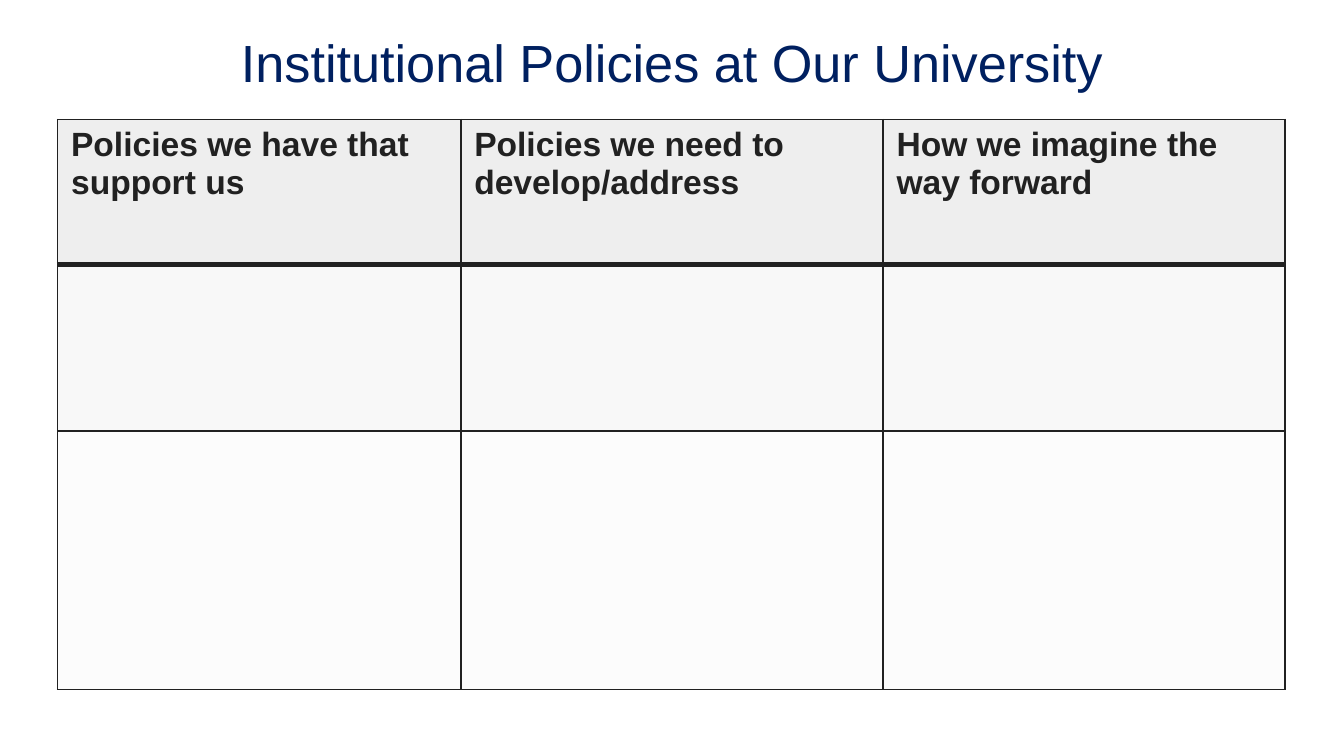
"""Build the slide on institutional policies with a three-column planning table."""
from dataclasses import dataclass

import lxml.etree
import pptx
import pptx.dml.color
import pptx.enum.shapes
import pptx.enum.text
import pptx.oxml.ns
import pptx.util

Cm = pptx.util.Cm
Pt = pptx.util.Pt
RGBColor = pptx.dml.color.RGBColor

NAVY = RGBColor(0x00, 0x20, 0x60)
INK = RGBColor(0x21, 0x21, 0x21)
WHITE = RGBColor(0xFF, 0xFF, 0xFF)
HEADER_GRAY = RGBColor(0xEE, 0xEE, 0xEE)
MIDDLE_GRAY = RGBColor(0xF8, 0xF8, 0xF8)
LOWER_GRAY = RGBColor(0xFC, 0xFC, 0xFC)

THIN = 1
THICK = 3


@dataclass(frozen=True)
class Column:
    heading: str
    width: float


@dataclass(frozen=True)
class Row:
    height: float
    fill: RGBColor
    top_border: int = THIN
    bottom_border: int = THIN


COLUMNS = [
    Column("Policies we have that support us", 7.62),
    Column("Policies we need to develop/address", 7.98),
    Column("How we imagine the way forward", 7.59),
]
ROWS = [
    Row(2.74, HEADER_GRAY, bottom_border=THICK),
    Row(3.15, MIDDLE_GRAY, top_border=THICK),
    Row(4.88, LOWER_GRAY),
]


def write_text(text_frame, text: str, *, size: float, color: RGBColor,
               bold: bool = False, alignment=pptx.enum.text.PP_ALIGN.LEFT) -> None:
    paragraph = text_frame.paragraphs[0]
    paragraph.alignment = alignment
    run = paragraph.add_run()
    run.text = text
    run.font.name = "Arial"
    run.font.size = Pt(size)
    run.font.bold = bold
    run.font.color.rgb = color


def add_border(cell, side: str, width: int) -> None:
    qualify = pptx.oxml.ns.qn
    properties = cell._tc.get_or_add_tcPr()
    line = lxml.etree.SubElement(properties, qualify(f"a:{side}"), w=str(Pt(width)))
    fill = lxml.etree.SubElement(line, qualify("a:solidFill"))
    lxml.etree.SubElement(fill, qualify("a:srgbClr"), val=str(INK))


def add_title(slide, text: str) -> None:
    title = slide.shapes.title
    title.left, title.top, title.width, title.height = Cm(0.86), Cm(0.23), Cm(23.67), Cm(1.6)
    text_frame = title.text_frame
    text_frame.word_wrap = True
    text_frame.auto_size = pptx.enum.text.MSO_AUTO_SIZE.NONE
    text_frame.vertical_anchor = pptx.enum.text.MSO_ANCHOR.TOP
    text_frame.margin_left = text_frame.margin_right = Cm(0.25)
    text_frame.margin_top = Cm(0.35)
    text_frame.margin_bottom = Cm(0)
    write_text(text_frame, text, size=28, color=NAVY,
               alignment=pptx.enum.text.PP_ALIGN.CENTER)


def add_backdrop(slide, width: int, height: int) -> None:
    slide.background.fill.solid()
    slide.background.fill.fore_color.rgb = INK
    backdrop = slide.shapes.add_shape(
        pptx.enum.shapes.MSO_SHAPE.RECTANGLE, 0, 0, width, height)
    backdrop.shadow.inherit = False
    backdrop.fill.solid()
    backdrop.fill.fore_color.rgb = WHITE
    backdrop.line.color.rgb = WHITE
    backdrop.line.width = Pt(2)
    slide.shapes.title.element.addprevious(backdrop.element)


def add_policy_table(slide, columns: list[Column], rows: list[Row]) -> None:
    width = Cm(sum(column.width for column in columns))
    height = Cm(sum(row.height for row in rows))
    table = slide.shapes.add_table(
        len(rows), len(columns), Cm(1.09), Cm(2.26), width, height).table
    table.first_row = False
    table.horz_banding = False
    for column_index, column in enumerate(columns):
        table.columns[column_index].width = Cm(column.width)
    for row_index, row in enumerate(rows):
        table.rows[row_index].height = Cm(row.height)
        for cell in table.rows[row_index].cells:
            borders = {"lnL": THIN, "lnR": THIN,
                       "lnT": row.top_border, "lnB": row.bottom_border}
            for side, border_width in borders.items():
                add_border(cell, side, border_width)
            cell.fill.solid()
            cell.fill.fore_color.rgb = row.fill
    for cell, column in zip(table.rows[0].cells, columns):
        write_text(cell.text_frame, column.heading, size=18, color=INK, bold=True)


def main() -> None:
    presentation = pptx.Presentation()
    presentation.slide_width = Cm(25.4)
    presentation.slide_height = Cm(14.29)
    slide = presentation.slides.add_slide(presentation.slide_layouts.get_by_name("Title Only"))
    add_backdrop(slide, presentation.slide_width, presentation.slide_height)
    add_title(slide, "Institutional Policies at Our University")
    add_policy_table(slide, COLUMNS, ROWS)
    presentation.save("out.pptx")


if __name__ == "__main__":
    main()
